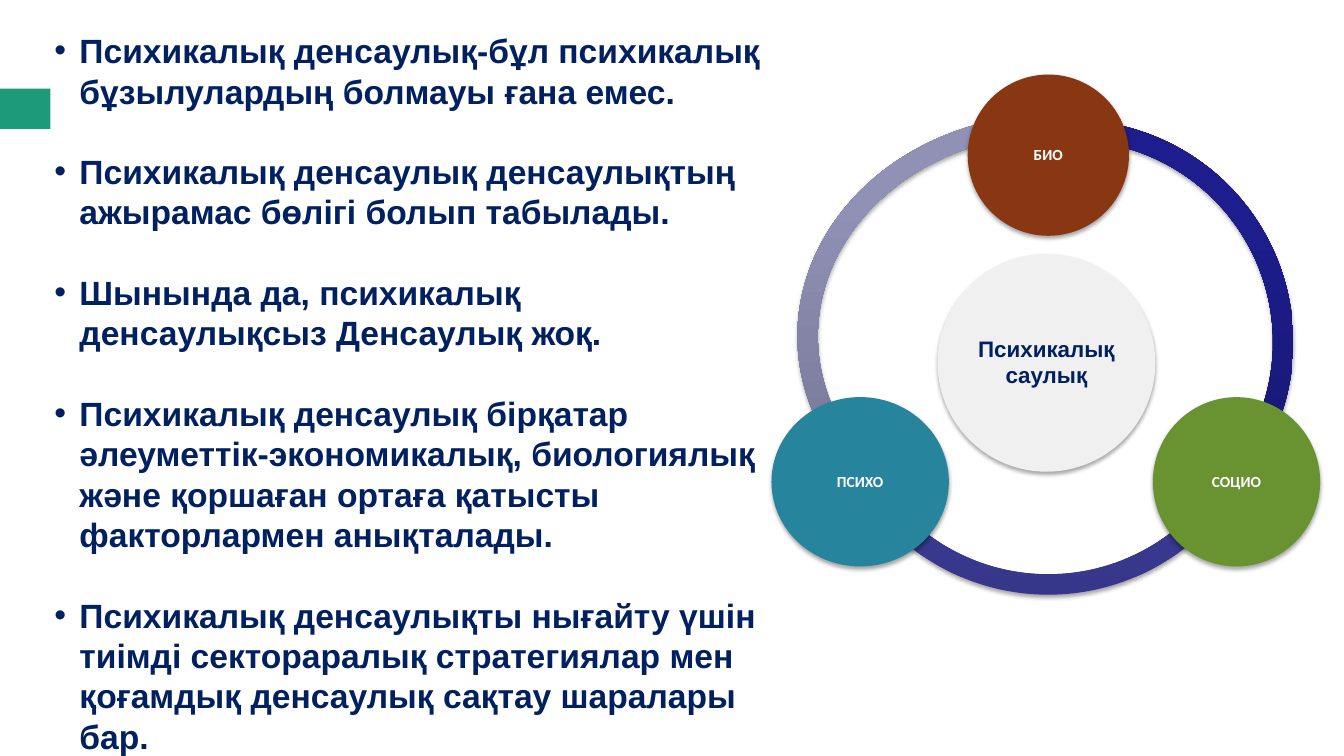
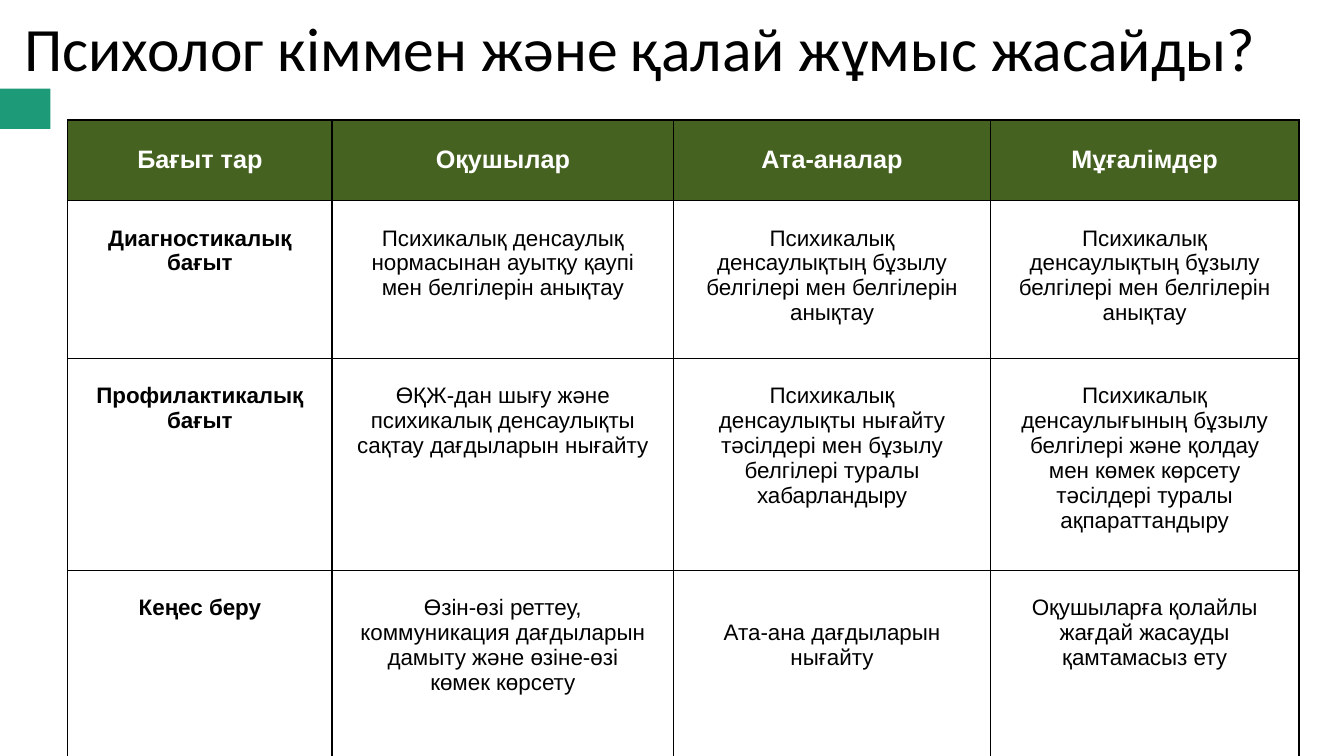
from lxml import etree
from pptx import Presentation
from pptx.dml.color import RGBColor
from pptx.enum.shapes import MSO_SHAPE
from pptx.enum.text import MSO_ANCHOR, PP_ALIGN
from pptx.oxml import parse_xml
from pptx.oxml.ns import nsdecls, qn
from pptx.util import Inches, Pt

RECT, OVAL, ARC = MSO_SHAPE.RECTANGLE, MSO_SHAPE.OVAL, MSO_SHAPE.BLOCK_ARC
LEFT, CENTER = PP_ALIGN.LEFT, PP_ALIGN.CENTER
TOP, MIDDLE = MSO_ANCHOR.TOP, MSO_ANCHOR.MIDDLE

WIDTH, HEIGHT = Inches(13.33), Inches(7.5)
NAVY, GREEN, OLIVE = "002060", "1D9A78", "456220"
BLACK, WHITE, PALE = "000000", "FFFFFF", "F1F0F0"
BODY_FONT, TITLE_FONT = "Arial", "Calibri"
ARC_SWEEP, ARC_THICKNESS = 120, 0.046


def rgb(code):
    return RGBColor.from_string(code)


def around(x, y, width, height):
    """Turn a centre and a size into left, top, width, height."""
    return x - width / 2, y - height / 2, width, height


class Deck:
    """Holds the style and the current slide; places are percent of the slide's size."""

    def __init__(self):
        self.prs = Presentation()
        self.prs.slide_width, self.prs.slide_height = WIDTH, HEIGHT
        self.slide = None

    def new_slide(self):
        self.slide = self.prs.slides.add_slide(self.prs.slide_layouts[6])
        self.shape(RECT, (0, 11.73, 3.75, 5.33), GREEN)

    def place(self, box):
        x, y, width, height = box
        return [int(share * side / 100) for share, side in
                ((x, WIDTH), (y, HEIGHT), (width, WIDTH), (height, HEIGHT))]

    def add_text(self, paragraph, text, size, color, font=BODY_FONT, bold=False,
                 align=LEFT, spacing=1.0):
        paragraph.alignment, paragraph.line_spacing = align, spacing
        run = paragraph.add_run()
        run.text = text
        run.font.size, run.font.name, run.font.bold = Pt(size), font, bold
        run.font.color.rgb = rgb(color)

    def text_frame(self, box, anchor=TOP):
        frame = self.slide.shapes.add_textbox(*self.place(box)).text_frame
        frame.word_wrap, frame.vertical_anchor = True, anchor
        return frame

    def title(self, text):
        frame = self.text_frame((1.05, -2.8, 98.95, 19.33), MIDDLE)
        self.add_text(frame.paragraphs[0], text, 44, BLACK, TITLE_FONT, spacing=0.9)

    def bullets(self, box, items):
        frame = self.text_frame(box)
        for index, item in enumerate(items):
            paragraph = frame.paragraphs[0] if index == 0 else frame.add_paragraph()
            self.add_text(paragraph, item, 24, NAVY, bold=True, spacing=Pt(28.8))
            paragraph.space_after = Pt(28.8)
            props = paragraph._p.get_or_add_pPr()
            props.set("marL", str(Inches(0.25)))
            props.set("indent", str(-Inches(0.25)))
            color = etree.SubElement(props, qn("a:buClr"))
            etree.SubElement(color, qn("a:srgbClr"), val=NAVY)
            etree.SubElement(props, qn("a:buFont"), typeface=BODY_FONT)
            etree.SubElement(props, qn("a:buChar"), char="•")

    def shape(self, kind, box, color=None):
        shape = self.slide.shapes.add_shape(kind, *self.place(box))
        shape.shadow.inherit = False
        shape.line.fill.background()
        if color:
            shape.fill.solid()
            shape.fill.fore_color.rgb = rgb(color)
        return shape

    def soft_shadow(self, shape):
        effects = shape._element.spPr.find(qn("a:effectLst"))
        effects.append(parse_xml(
            f'<a:outerShdw {nsdecls("a")} blurRad="{Pt(3.1)}" dist="{Pt(1.8)}" '
            f'dir="5400000" rotWithShape="0"><a:srgbClr val="{BLACK}">'
            '<a:alpha val="35000"/></a:srgbClr></a:outerShdw>'))

    def arc(self, box, start, dark, light):
        """Draw a ring segment running clockwise from start, in degrees."""
        arc = self.shape(ARC, box)
        for index, angle in enumerate((start, (start + ARC_SWEEP) % 360)):
            arc.adjustments[index] = angle * 0.6
        arc.adjustments[2] = ARC_THICKNESS
        arc.fill.gradient()
        arc.fill.gradient_angle = 90
        for stop, color, position in zip(arc.fill.gradient_stops, (dark, light), (0, 0.8)):
            stop.color.rgb, stop.position = rgb(color), position
        self.soft_shadow(arc)

    def circle(self, box, color, label, size=11, ink=WHITE, font=TITLE_FONT):
        circle = self.shape(OVAL, box, color)
        self.soft_shadow(circle)
        frame = circle.text_frame
        frame.word_wrap, frame.vertical_anchor = True, MIDDLE
        frame.margin_left = frame.margin_right = Inches(0.02)
        frame.margin_top = frame.margin_bottom = Inches(0.02)
        self.add_text(frame.paragraphs[0], label, size, ink, font, True, CENTER, 0.95)

    def cell(self, cell, text, header, bold, top):
        if header:
            cell.fill.solid()
            cell.fill.fore_color.rgb = rgb(OLIVE)
        else:
            cell.fill.background()
        cell.margin_left = cell.margin_right = cell.margin_bottom = Inches(0.25)
        cell.margin_top = Inches(top)
        self.add_text(cell.text_frame.paragraphs[0], text, 18 if header else 16,
                      WHITE if header else BLACK, bold=bold, align=CENTER)
        props = cell._tc.get_or_add_tcPr()
        for index, side in enumerate(("lnL", "lnR", "lnT", "lnB")):
            props.insert(index, parse_xml(
                f'<a:{side} {nsdecls("a")} w="{Pt(1)}"><a:solidFill>'
                f'<a:srgbClr val="{BLACK}"/></a:solidFill></a:{side}>'))

    def table(self, box, columns, rows, texts, lowered):
        """Fill a table; lowered lists the cells whose text starts one line down."""
        table = self.slide.shapes.add_table(len(rows), len(columns), *self.place(box)).table
        table.first_row = table.horz_banding = False
        for column, share in zip(table.columns, columns):
            column.width = int(share * WIDTH / 100)
        for row, share in zip(table.rows, rows):
            row.height = int(share * HEIGHT / 100)
        for r, line in enumerate(texts):
            for c, text in enumerate(line):
                self.cell(table.cell(r, c), text, r == 0, r == 0 or c == 0,
                          0.5 if (r, c) in lowered else 0.25)


def health_slide(deck):
    deck.new_slide()
    deck.bullets((3.3, 3.33, 55.14, 85.73), [
        "Психикалық денсаулық-бұл психикалық бұзылулардың болмауы ғана емес.",
        "Психикалық денсаулық денсаулықтың ажырамас бөлігі болып табылады.",
        "Шынында да, психикалық денсаулықсыз Денсаулық жоқ.",
        "Психикалық денсаулық бірқатар әлеуметтік-экономикалық, биологиялық және "
        "қоршаған ортаға қатысты факторлармен анықталады.",
        "Психикалық денсаулықты нығайту үшін тиімді сектораралық стратегиялар мен "
        "қоғамдық денсаулық сақтау шаралары бар.",
    ])
    middle, spread, low = 78, 14, 63.73
    deck.arc(around(78.5, 44.47, 38.33, 58.8), 150, "6F6F8D", "9191B6")
    deck.arc(around(middle, 49.27, 33.08, 58.8), 30, "36368A", "4646B3")
    deck.arc(around(79.7, 45.27, 33.08, 58.8), 270, "16166C", "1D1D8D")
    deck.circle(around(77.86, 48, 16.2, 28.8), PALE, "Психикалық саулық",
                16, NAVY, BODY_FONT)
    deck.circle(around(middle, 20.53, 12, 21.33), "893713", "БИО")
    deck.circle(around(middle + spread, low, 12.45, 22.4), "699331", "СОЦИО")
    deck.circle(around(middle - spread, low, 13.2, 22.4), "26859D", "ПСИХО")


def work_slide(deck):
    deck.new_slide()
    deck.title("Психолог кіммен және қалай жұмыс жасайды?")
    symptoms = "Психикалық денсаулықтың бұзылу белгілері мен белгілерін анықтау"
    deck.table(
        (5.05, 15.87, 91.6, 77.07),
        (19.65, 25.43, 23.56, 22.96), (9.87, 19.07, 22.53, 25.6),
        [
            ("Бағыт тар", "Оқушылар", "Ата-аналар", "Мұғалімдер"),
            ("Диагностикалық бағыт",
             "Психикалық денсаулық нормасынан ауытқу қаупі мен белгілерін анықтау",
             symptoms, symptoms),
            ("Профилактикалық бағыт",
             "ӨҚЖ-дан шығу және психикалық денсаулықты сақтау дағдыларын нығайту",
             "Психикалық денсаулықты нығайту тәсілдері мен бұзылу белгілері туралы "
             "хабарландыру",
             "Психикалық денсаулығының бұзылу белгілері және қолдау мен көмек "
             "көрсету тәсілдері туралы ақпараттандыру"),
            ("Кеңес беру",
             "Өзін-өзі реттеу, коммуникация дағдыларын дамыту және өзіне-өзі көмек "
             "көрсету",
             "Ата-ана дағдыларын нығайту",
             "Оқушыларға қолайлы жағдай жасауды қамтамасыз ету"),
        ],
        lowered={(3, 2)})


def main():
    deck = Deck()
    health_slide(deck)
    work_slide(deck)
    deck.prs.save("out.pptx")


if __name__ == "__main__":
    main()
